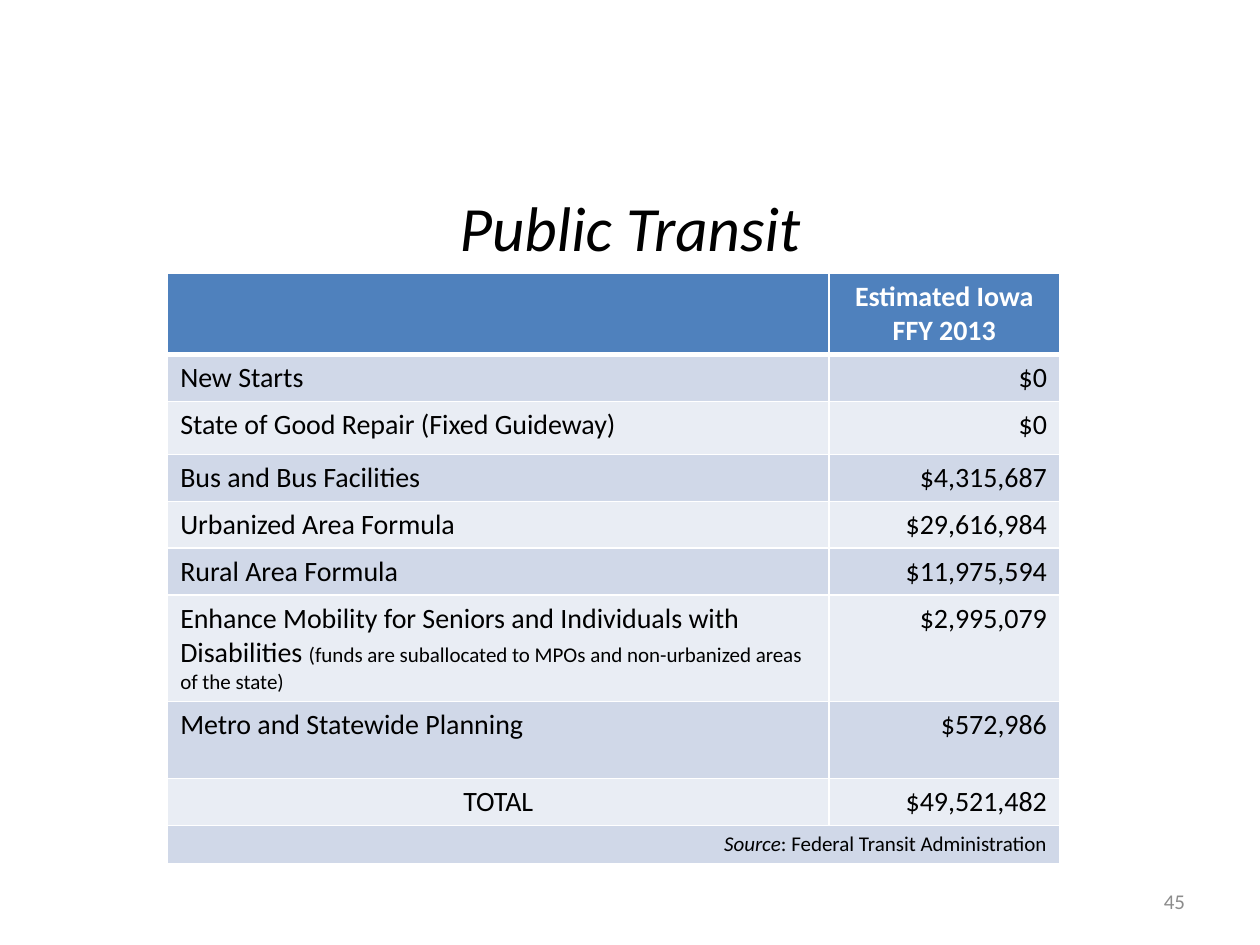
from dataclasses import dataclass

from lxml.etree import SubElement
from pptx import Presentation
from pptx.dml.color import RGBColor
from pptx.enum.text import MSO_ANCHOR, PP_ALIGN
from pptx.oxml.ns import qn
from pptx.table import _Cell
from pptx.util import Cm, Pt

COLORS = {
    "header": "4F81BD",
    "odd": "D0D8E8",
    "even": "E9EDF4",
    "white": "FFFFFF",
    "black": "000000",
    "number": "8C8C8C",
}
FONT = "Calibri"


@dataclass
class Run:
    text: str
    size: int = 16
    italic: bool = False


@dataclass
class Row:
    height: float
    label: list[Run]
    amount: str = ""
    align: PP_ALIGN = PP_ALIGN.LEFT
    merged: bool = False


ROWS = [
    Row(1.04, [], "Estimated Iowa FFY 2013"),
    Row(0.91, [Run("New Starts")], "$0"),
    Row(1.07, [Run("State of Good Repair (Fixed Guideway)")], "$0"),
    Row(0.91, [Run("Bus and Bus Facilities")], "$4,315,687"),
    Row(0.91, [Run("Urbanized Area Formula")], "$29,616,984"),
    Row(0.91, [Run("Rural Area Formula")], "$11,975,594"),
    Row(1.73, [Run("Enhance Mobility for Seniors and Individuals with Disabilities "),
               Run("(funds are suballocated to MPOs and non-urbanized areas of the state)", 12)],
        "$2,995,079"),
    Row(1.55, [Run("Metro and Statewide Planning")], "$572,986"),
    Row(0.91, [Run("TOTAL")], "$49,521,482", PP_ALIGN.CENTER),
    Row(0.74, [Run("Source", 12, True), Run(": Federal Transit Administration", 12)],
        align=PP_ALIGN.RIGHT, merged=True),
]


def set_font(font, size: int, color: str, bold: bool = False) -> None:
    font.name = FONT
    font.size = Pt(size)
    font.bold = bold
    font.color.rgb = RGBColor.from_string(COLORS[color])


def style_cell(cell: _Cell, fill: str, top: int, bottom: int) -> None:
    tcPr = cell._tc.get_or_add_tcPr()
    for side, width in (("L", 1), ("R", 1), ("T", top), ("B", bottom)):
        ln = SubElement(tcPr, qn(f"a:ln{side}"), w=str(Pt(width)))
        SubElement(SubElement(ln, qn("a:solidFill")), qn("a:srgbClr"), val=COLORS["white"])
    cell.fill.solid()
    cell.fill.fore_color.rgb = RGBColor.from_string(COLORS[fill])


def write_cell(cell: _Cell, runs: list[Run], align: PP_ALIGN, header: bool) -> None:
    p = cell.text_frame.paragraphs[0]
    p.alignment = align
    set_font(p.font, runs[0].size if runs else 16, "white" if header else "black", header)
    for run in runs:
        r = p.add_run()
        r.text = run.text
        set_font(r.font, run.size, "white" if header else "black", header)
        r.font.italic = run.italic


def add_funding_table(slide) -> None:
    gf = slide.shapes.add_table(len(ROWS), 2, Cm(3.38), Cm(5.51), Cm(17.98), Cm(11.76))
    table = gf.table
    for col, width in zip(table.columns, (13.33, 4.65)):
        col.width = Cm(width)
    for i, row in enumerate(ROWS):
        header = i == 0
        table.rows[i].height = Cm(row.height)
        fill = "header" if header else ("odd" if i % 2 else "even")
        label, amount = table.cell(i, 0), table.cell(i, 1)
        for cell in (label, amount):
            style_cell(cell, fill, 3 if i == 1 else 1, 3 if header else 1)
        write_cell(label, row.label, row.align, header)
        if row.merged:
            label.merge(amount)
        else:
            align = PP_ALIGN.CENTER if header else PP_ALIGN.RIGHT
            write_cell(amount, [Run(row.amount)], align, header)
    gf.height = Cm(11.76)


def add_title(slide) -> None:
    sp = slide.shapes.title
    sp.left, sp.top, sp.width, sp.height = Cm(1.27), Cm(3.61), Cm(22.86), Cm(1.9)
    tf = sp.text_frame
    tf.text = "Public Transit"
    tf.vertical_anchor = MSO_ANCHOR.MIDDLE
    p = tf.paragraphs[0]
    p.alignment = PP_ALIGN.CENTER
    set_font(p.font, 36, "black")
    p.font.italic = True


def add_page_number(slide) -> None:
    sp = slide.shapes.add_textbox(Cm(18.21), Cm(17.65), Cm(5.93), Cm(1.02))
    tf = sp.text_frame
    tf.word_wrap = True
    tf.vertical_anchor = MSO_ANCHOR.MIDDLE
    p = tf.paragraphs[0]
    p.text = "45"
    p.alignment = PP_ALIGN.RIGHT
    set_font(p.font, 12, "number")


def main() -> None:
    prs = Presentation()
    prs.slide_width, prs.slide_height = Cm(25.4), Cm(19.05)
    s = prs.slides.add_slide(prs.slide_layouts[5])
    add_title(s)
    add_funding_table(s)
    add_page_number(s)
    prs.save("out.pptx")


if __name__ == "__main__":
    main()
